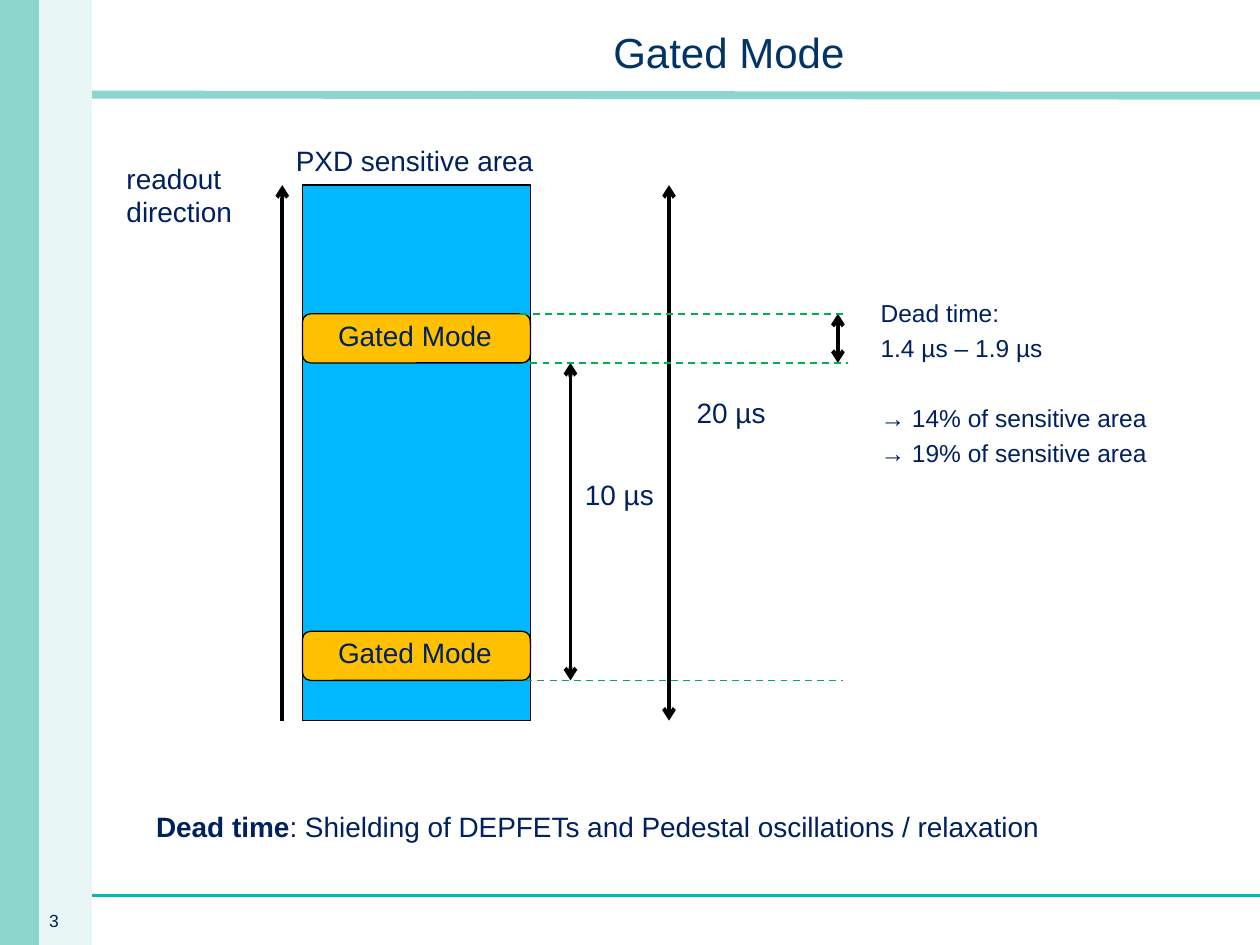
from lxml import etree
from pptx import Presentation
from pptx.dml.color import RGBColor
from pptx.enum.dml import MSO_LINE
from pptx.enum.shapes import MSO_CONNECTOR, MSO_SHAPE
from pptx.enum.text import MSO_ANCHOR, MSO_AUTO_SIZE, PP_ALIGN
from pptx.oxml.ns import qn
from pptx.util import Pt

RECTANGLE = MSO_SHAPE.RECTANGLE
ROUNDED = MSO_SHAPE.ROUNDED_RECTANGLE
STRAIGHT = MSO_CONNECTOR.STRAIGHT
DASH = MSO_LINE.DASH
CENTER = PP_ALIGN.CENTER
MIDDLE = MSO_ANCHOR.MIDDLE
FIT_TEXT = MSO_AUTO_SIZE.SHAPE_TO_FIT_TEXT

NAVY = RGBColor(0x00, 0x20, 0x60)
TITLE_BLUE = RGBColor(0x00, 0x33, 0x66)
MINT = RGBColor(0x8D, 0xD6, 0xCE)
PALE_MINT = RGBColor(0xE8, 0xF7, 0xF5)
TEAL = RGBColor(0x00, 0xBA, 0xB6)
SKY = RGBColor(0x00, 0xB8, 0xFF)
AMBER = RGBColor(0xFF, 0xC0, 0x00)
GREEN = RGBColor(0x00, 0xB0, 0x50)
BLACK = RGBColor(0x00, 0x00, 0x00)

# Diagram geometry in points
AREA_LEFT, AREA_WIDTH = 172.8, 130.3
AREA_TOP, AREA_BOTTOM = 105.8, 411.8
GATE_HEIGHT = 28.1
UPPER_GATE, LOWER_GATE = 179.3, 360.7


class SlideBuilder:
    """Holds the text style and the slide being built."""

    font_name = "Arial"

    def __init__(self, presentation):
        self.slide = presentation.slides.add_slide(presentation.slide_layouts[5])

    def style(self, target, **values):
        values = {"name": self.font_name, **values}
        color = values.pop("color", NAVY)
        for name, value in values.items():
            setattr(target.font, name, value)
        target.font.color.rgb = color

    def title(self, text, left, top, width, height):
        shape = self.slide.shapes.title
        box = {"left": left, "top": top, "width": width, "height": height}
        for name, value in box.items():
            setattr(shape, name, Pt(value))
        shape.text_frame.text = text
        shape.text_frame.vertical_anchor = MIDDLE
        paragraph = shape.text_frame.paragraphs[0]
        paragraph.alignment = CENTER
        paragraph.line_spacing = 1.1
        self.style(paragraph.runs[0], size=Pt(24), color=TITLE_BLUE)

    def box(self, kind, left, top, width, height, fill, outlined=False):
        shape = self.slide.shapes.add_shape(kind, Pt(left), Pt(top), Pt(width), Pt(height))
        shape.shadow.inherit = False
        shape.fill.solid()
        shape.fill.fore_color.rgb = fill
        if outlined:
            shape.line.color.rgb = BLACK
            shape.line.width = Pt(0.75)
        else:
            shape.line.fill.background()

    def line(self, start, end, color, width, dash=None, arrows=()):
        line = self.slide.shapes.add_connector(STRAIGHT, *map(Pt, start + end))
        line.line.color.rgb = color
        line.line.width = Pt(width)
        if dash:
            line.line.dash_style = dash
        for arrow in arrows:
            etree.SubElement(line.line._get_or_add_ln(), qn(f"a:{arrow}"), type="arrow")
        etree.SubElement(line._element.spPr, qn("a:effectLst"))

    def text(self, lines, left, top, width, height, size=16, spacing=0.8, gaps=None):
        """Each line is a list of (text, bold) runs; gaps maps line index to space before."""
        shape = self.slide.shapes.add_textbox(Pt(left), Pt(top), Pt(width), Pt(height))
        frame = shape.text_frame
        frame.word_wrap = False
        frame.auto_size = FIT_TEXT
        for index, runs in enumerate(lines):
            paragraph = frame.add_paragraph() if index else frame.paragraphs[0]
            paragraph.line_spacing = spacing
            if gaps and index in gaps:
                paragraph.space_before = Pt(gaps[index])
            for text, bold in runs:
                run = paragraph.add_run()
                run.text = text
                self.style(run, size=Pt(size), bold=bold)

    def label(self, text, left, top, width, height=23, **options):
        lines = [[(line, False)] for line in text.split("\n")]
        self.text(lines, left, top, width, height, **options)


def main():
    presentation = Presentation()
    presentation.slide_width = Pt(720)
    presentation.slide_height = Pt(540)
    builder = SlideBuilder(presentation)

    # Frame: rules, side bands and page number
    builder.line((0, 54), (720, 54.7), MINT, 4.5)
    builder.line((52.6, 511.6), (720, 511.6), TEAL, 1.5)
    builder.box(RECTANGLE, 21.6, 0, 31, 540, PALE_MINT)
    builder.box(RECTANGLE, 0, 0, 22.3, 540, MINT)
    builder.label("3", 21, 519, 34.6, 17.3, size=10)
    builder.title("Gated Mode", 127.4, 9.4, 578.2, 37.4)

    # Sensitive area with its two gated bands
    builder.box(RECTANGLE, AREA_LEFT, AREA_TOP, AREA_WIDTH, AREA_BOTTOM - AREA_TOP, SKY, True)
    for gate_top in (UPPER_GATE, LOWER_GATE):
        builder.box(ROUNDED, AREA_LEFT, gate_top, AREA_WIDTH, GATE_HEIGHT, AMBER, True)
        builder.label("Gated Mode", 186.1, gate_top + 2.9, 103.7)

    # Readout direction and time spans
    upper_end, lower_end = UPPER_GATE + GATE_HEIGHT, LOWER_GATE + GATE_HEIGHT
    builder.line((161.3, AREA_BOTTOM), (161.3, AREA_TOP), BLACK, 2.25, arrows=("tailEnd",))
    for x, top, bottom in (
        (326, upper_end, lower_end),
        (382.3, AREA_TOP, AREA_BOTTOM),
        (478.8, UPPER_GATE, upper_end),
    ):
        builder.line((x, top), (x, bottom), BLACK, 2.25, arrows=("headEnd", "tailEnd"))

    # Dashed guides at the gate edges
    for left, right, y in (
        (297.4, 481.7, UPPER_GATE),
        (303.1, 484.5, upper_end),
        (300.2, 481.7, lower_end),
    ):
        builder.line((left, y), (right, y), GREEN, 1, dash=DASH)

    # Labels
    builder.label("10 µs", 327.2, 272.9, 54.7)
    builder.label("20 µs", 391, 226.1, 54.7)
    builder.label("PXD sensitive area", 162, 82.4, 151.9)
    builder.label("readout\ndirection", 65.2, 88.6, 75.6, 46, spacing=1)
    builder.label(
        "Dead time:\n1.4 µs – 1.9 µs\n→ 14% of sensitive area\n→ 19% of sensitive area",
        496.1, 163.4, 167, 108.7, size=14, spacing=1.2, gaps={2: 19.5},
    )
    builder.text(
        [[("Dead time", True),
          (": Shielding of DEPFETs and Pedestal oscillations / relaxation", False)]],
        82.1, 463, 524.9, 23,
    )

    presentation.save("out.pptx")


if __name__ == "__main__":
    main()
